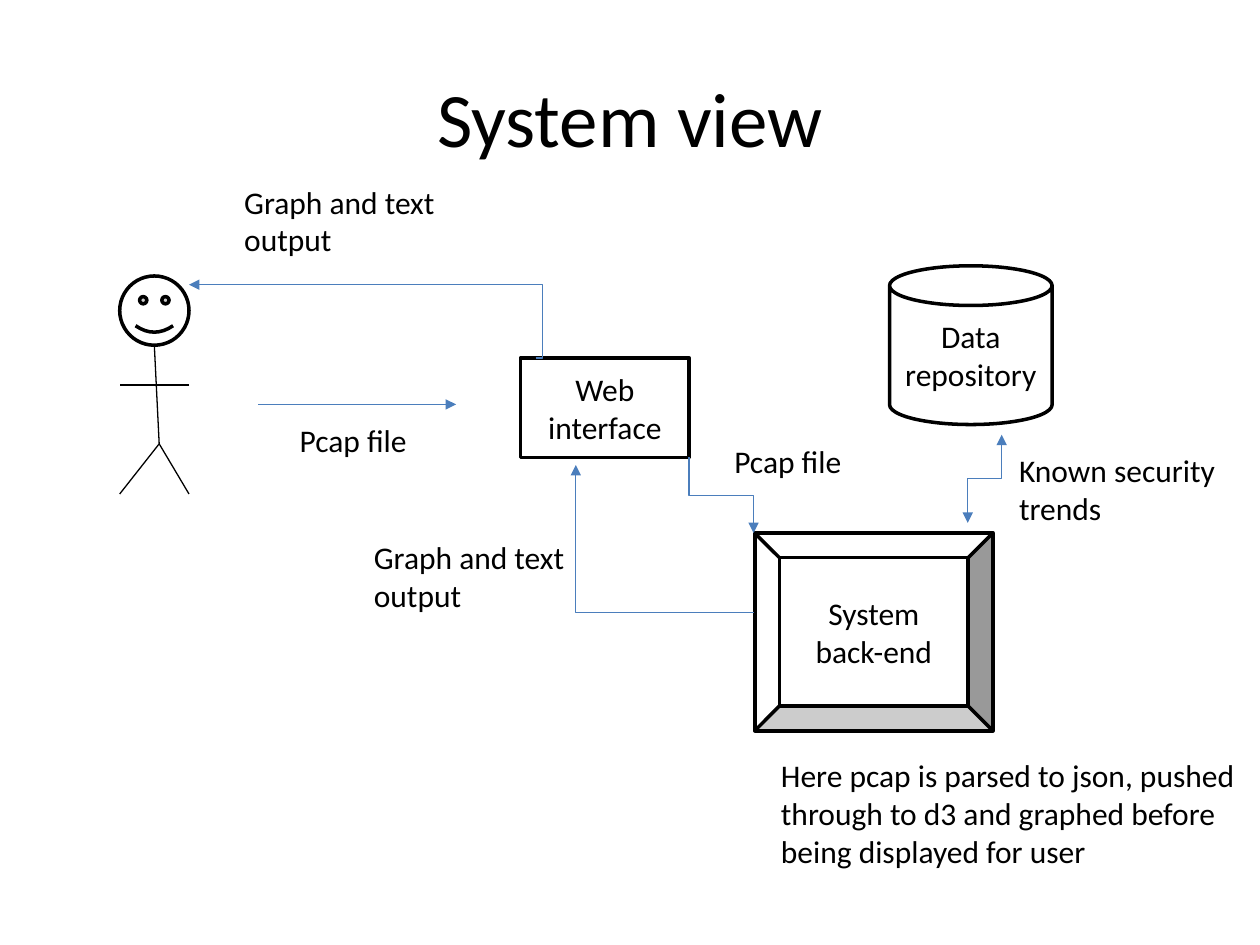
import math
from dataclasses import dataclass

import lxml.etree
import pptx
import pptx.dml.color
import pptx.enum.shapes
import pptx.enum.text
import pptx.oxml.ns
import pptx.util

Pt = pptx.util.Pt
SHAPE = pptx.enum.shapes.MSO_SHAPE
CONNECTOR = pptx.enum.shapes.MSO_CONNECTOR
ALIGN = pptx.enum.text.PP_ALIGN
ANCHOR = pptx.enum.text.MSO_ANCHOR
AUTO_SIZE = pptx.enum.text.MSO_AUTO_SIZE


@dataclass(frozen=True)
class Theme:
    font: str = "Calibri"
    ink: str = "000000"
    paper: str = "FFFFFF"
    flow: str = "4B7EBC"
    title_size: int = 44
    body_size: int = 18
    outline: float = 2
    thin: float = 0.75


THEME = Theme()


def color(value):
    return pptx.dml.color.RGBColor.from_string(value)


def apply(target, values):
    for name, value in values.items():
        setattr(target, name, value)


def child(parent, tag, **attributes):
    return lxml.etree.SubElement(parent, pptx.oxml.ns.qn(tag), **attributes)


def write(shape, lines, size, align, frame_format):
    apply(shape.text_frame, frame_format)
    shape.text_frame.text = "\n".join(lines)
    for paragraph in shape.text_frame.paragraphs:
        paragraph.alignment = align
        apply(paragraph.font, {"name": THEME.font, "size": Pt(size)})
        paragraph.font.color.rgb = color(THEME.ink)


def add_title(slide, box, text):
    shape = slide.shapes.add_textbox(*map(Pt, box))
    write(shape, [text], THEME.title_size, ALIGN.CENTER,
          {"word_wrap": True, "vertical_anchor": ANCHOR.MIDDLE})


def add_label(slide, box, lines, wrap):
    shape = slide.shapes.add_textbox(*map(Pt, box))
    write(shape, lines, THEME.body_size, ALIGN.LEFT,
          {"word_wrap": wrap, "auto_size": AUTO_SIZE.SHAPE_TO_FIT_TEXT})


def add_component(slide, box, preset, text=""):
    shape = slide.shapes.add_shape(preset, *map(Pt, box))
    shape.shadow.inherit = False
    shape.fill.solid()
    shape.fill.fore_color.rgb = color(THEME.paper)
    shape.line.color.rgb = color(THEME.ink)
    shape.line.width = Pt(THEME.outline)
    if text:
        write(shape, [text], THEME.body_size, ALIGN.CENTER,
              {"word_wrap": True, "vertical_anchor": ANCHOR.MIDDLE})


def add_line(slide, kind, start, end, line_color, arrows=()):
    connector = slide.shapes.add_connector(kind, *map(Pt, (*start, *end)))
    connector.line.color.rgb = color(line_color)
    connector.line.width = Pt(THEME.thin)
    properties = connector._element.spPr
    outline = properties.find(pptx.oxml.ns.qn("a:ln"))
    for arrow in arrows:
        child(outline, f"a:{arrow}", type="triangle")
    child(properties, "a:effectLst")
    return connector


def add_elbow(slide, start, end, rotation, bend, arrows):
    center = [(a + b) / 2 for a, b in zip(start, end)]
    across, down = (a - c for a, c in zip(start, center))
    cosine = round(math.cos(math.radians(rotation)))
    sine = round(math.sin(math.radians(rotation)))
    offset = (across * cosine + down * sine, down * cosine - across * sine)
    first = [c + o for c, o in zip(center, offset)]
    last = [c - o for c, o in zip(center, offset)]
    connector = add_line(slide, CONNECTOR.ELBOW, first, last, THEME.flow, arrows)
    properties = connector._element.spPr
    properties.find(pptx.oxml.ns.qn("a:xfrm")).set("rot", str(rotation * 60000))
    geometry = properties.find(pptx.oxml.ns.qn("a:prstGeom"))
    guides = geometry.find(pptx.oxml.ns.qn("a:avLst"))
    if guides is None:
        guides = child(geometry, "a:avLst")
    child(guides, "a:gd", name="adj1", fmla=f"val {round(bend * 100000)}")


def add_user(slide, box):
    left, top, width, height = box
    right, bottom = left + width, top + height
    neck = (left + width / 2, top + width)
    hip = (left + width * 0.57, top + height * 0.77)
    shoulder = top + height / 2
    add_component(slide, (left, top, width, width), SHAPE.SMILEY_FACE)
    for start, end in (
        (neck, hip),
        ((right, shoulder), (left, shoulder)),
        ((left, bottom), hip),
        ((right, bottom), hip),
    ):
        add_line(slide, CONNECTOR.STRAIGHT, start, end, THEME.ink)


def add_system(slide, box):
    left, top = box[:2]

    def place(x, y, *size):
        return (left + x, top + y, *size)

    add_user(slide, place(32.4, 56.9, 39.6, 124.6))
    for frame, preset, text in (
        ((261.4, 103.7, 96.5, 56.9), SHAPE.RECTANGLE, "Web interface"),
        ((472.3, 51.1, 92.9, 90.7), SHAPE.CAN, "Data repository"),
        ((395.3, 203.8, 136.1, 113), SHAPE.BEVEL, "System back-end"),
    ):
        add_component(slide, place(*frame), preset, text)

    add_line(slide, CONNECTOR.STRAIGHT, place(111.6, 130.3), place(224.6, 130.3),
             THEME.flow, ["tailEnd"])
    for start, end, rotation, bend, arrows in (
        ((536.4, 147.6), (517, 198), 90, 0.5, ["headEnd", "tailEnd"]),
        ((357.8, 160.6), (394.6, 203.8), 270, 0.5, ["tailEnd"]),
        ((394.6, 249.1), (293, 164.9), 180, 1, ["tailEnd"]),
        ((270, 103.7), (72, 61.9), 180, -0.02, ["tailEnd"]),
    ):
        add_elbow(slide, place(*start), place(*end), rotation, bend, arrows)

    for frame, lines, wrap in (
        ((128.2, 136.1, 76.3, 29), ["Pcap file"], False),
        ((376.6, 148.3, 76.3, 29), ["Pcap file"], False),
        ((539.3, 153.4, 148.3, 51), ["Known security trends"], True),
        ((170.6, 203, 148.3, 51), ["Graph and text output"], True),
        ((96.5, 0, 148.3, 51), ["Graph and text output"], True),
        ((403.2, 327.6, 280.8, 72.7),
         ["Here pcap is parsed to json, pushed",
          "through to d3 and graphed before",
          "being displayed for user"], False),
    ):
        add_label(slide, place(*frame), lines, wrap)


def main():
    presentation = pptx.Presentation()
    apply(presentation, {"slide_width": Pt(720), "slide_height": Pt(540)})
    slide = presentation.slides.add_slide(presentation.slide_layouts[6])
    add_title(slide, (36, 21.6, 648, 90), "System view")
    add_system(slide, (36, 100.8, 684, 400))
    presentation.save("out.pptx")


if __name__ == "__main__":
    main()
